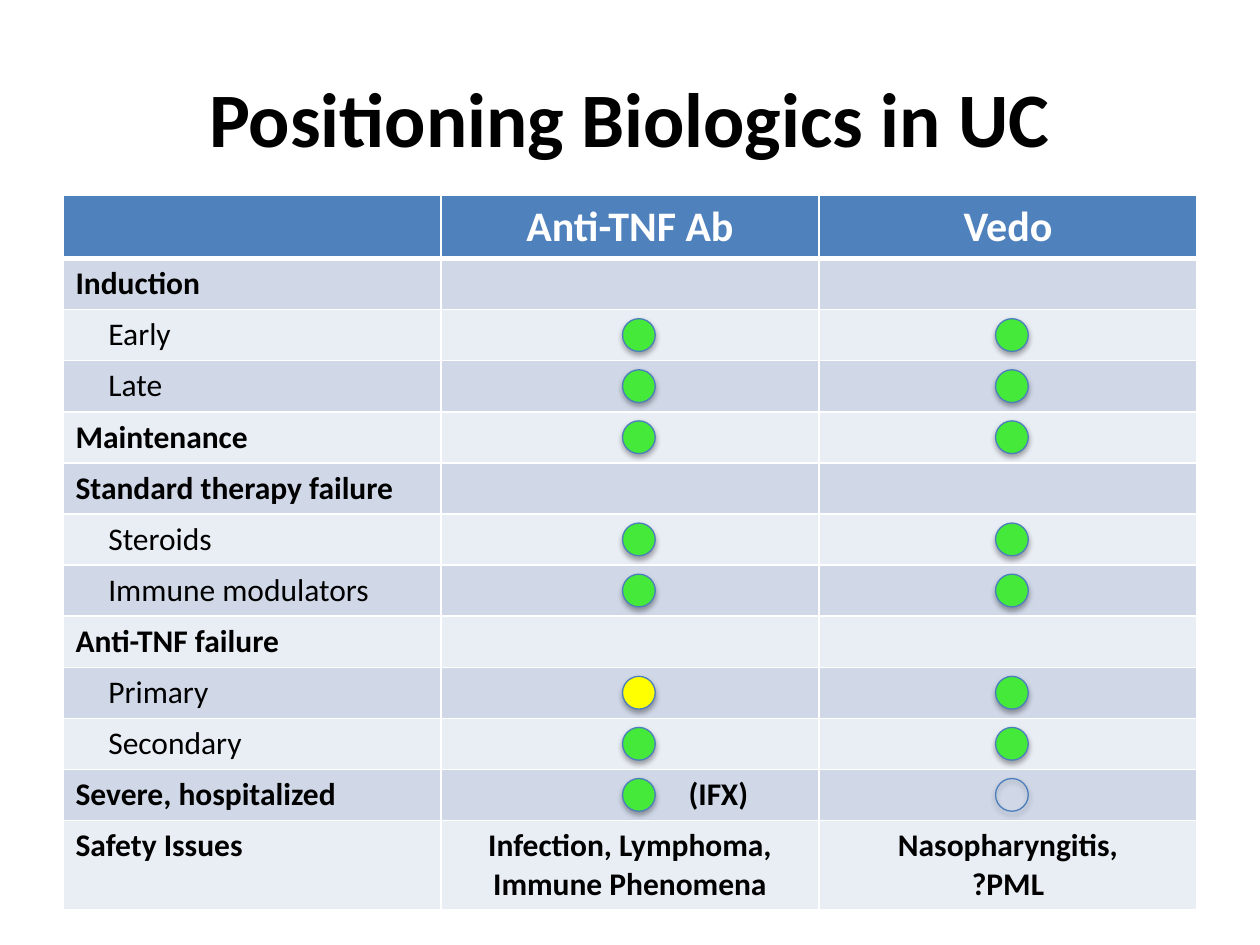
"""Build a slide comparing biologics for UC in a table with rating dots."""
from lxml import etree
from pptx import Presentation
from pptx.dml.color import RGBColor
from pptx.enum import shapes, text
from pptx.oxml import ns
from pptx.util import Cm, Pt

BLACK = RGBColor(0x00, 0x00, 0x00)
WHITE = RGBColor(0xFF, 0xFF, 0xFF)
HEADER_BLUE = RGBColor(0x4F, 0x81, 0xBD)
BAND_DARK = RGBColor(0xD0, 0xD8, 0xE8)
BAND_LIGHT = RGBColor(0xE9, 0xED, 0xF4)
DOT_LINE = RGBColor(0x4B, 0x7E, 0xBC)
GREEN = RGBColor(0x45, 0xE9, 0x3A)
YELLOW = RGBColor(0xFF, 0xFF, 0x00)
FONT = "Calibri"

TITLE = "Positioning Biologics in UC"
HEADERS = ["", "Anti-TNF Ab", "Vedo"]
TOPIC, DETAIL = "topic", "detail"
ROWS = [
    (TOPIC, "Induction", "", ""),
    (DETAIL, "Early", "", ""),
    (DETAIL, "Late", "", ""),
    (TOPIC, "Maintenance", "", ""),
    (TOPIC, "Standard therapy failure", "", ""),
    (DETAIL, "Steroids", "", ""),
    (DETAIL, "Immune modulators", "", ""),
    (TOPIC, "Anti-TNF failure", "", ""),
    (DETAIL, "Primary", "", ""),
    (DETAIL, "Secondary", "", ""),
    (TOPIC, "Severe, hospitalized", "(IFX)", ""),
    (TOPIC, "Safety Issues", "Infection, Lymphoma, Immune Phenomena",
     "Nasopharyngitis,\n?PML"),
]
RATINGS = {
    "Early": (GREEN, GREEN),
    "Late": (GREEN, GREEN),
    "Maintenance": (GREEN, GREEN),
    "Steroids": (GREEN, GREEN),
    "Immune modulators": (GREEN, GREEN),
    "Primary": (YELLOW, GREEN),
    "Secondary": (GREEN, GREEN),
    "Severe, hospitalized": (GREEN, None),
}

LEFT, TOP, COLUMN_WIDTH = Cm(1.27), Cm(3.94), Cm(7.62)
ROW_HEIGHTS = [Cm(1.27)] + [Cm(1.03)] * (len(ROWS) - 1) + [Cm(1.79)]
DOT_SIZE = Cm(0.66)
DOT_CENTERS = (Cm(12.88), Cm(20.4))
DETAIL_INDENT, NOTE_INDENT = Cm(0.66), Cm(4.74)


def write(frame, content, size, color, bold=True, centered=True, indent=0):
    for index, line in enumerate(content.split("\n")):
        paragraph = frame.add_paragraph() if index else frame.paragraphs[0]
        paragraph.alignment = text.PP_ALIGN.CENTER if centered else text.PP_ALIGN.LEFT
        if indent:
            paragraph._p.get_or_add_pPr().set("indent", str(indent))
        run = paragraph.add_run()
        run.text = line
        run.font.name, run.font.size, run.font.bold = FONT, Pt(size), bold
        run.font.color.rgb = color


def style_cell(cell, color, bottom_width):
    cell.fill.solid()
    cell.fill.fore_color.rgb = color
    properties = cell._tc.get_or_add_tcPr()
    for index, side in enumerate(("lnL", "lnR", "lnT", "lnB")):
        width = Pt(bottom_width if side == "lnB" else 1)
        border = etree.Element(ns.qn(f"a:{side}"), w=str(width))
        fill = etree.SubElement(border, ns.qn("a:solidFill"))
        etree.SubElement(fill, ns.qn("a:srgbClr"), val=str(WHITE))
        properties.insert(index, border)


def add_title(slide):
    box = slide.shapes.add_textbox(LEFT, Cm(0.76), Cm(22.86), Cm(3.18))
    box.text_frame.word_wrap = True
    box.text_frame.vertical_anchor = text.MSO_ANCHOR.MIDDLE
    write(box.text_frame, TITLE, 44, BLACK)


def add_comparison(slide):
    table = slide.shapes.add_table(
        len(ROW_HEIGHTS), len(HEADERS), LEFT, TOP,
        COLUMN_WIDTH * len(HEADERS), sum(ROW_HEIGHTS)).table
    for row, height in zip(table.rows, ROW_HEIGHTS):
        row.height = height
    for column, header in enumerate(HEADERS):
        table.columns[column].width = COLUMN_WIDTH
        cell = table.cell(0, column)
        style_cell(cell, HEADER_BLUE, 3)
        if header:
            write(cell.text_frame, header, 24, WHITE)
    for number, (level, *contents) in enumerate(ROWS, 1):
        for column, content in enumerate(contents):
            cell = table.cell(number, column)
            style_cell(cell, BAND_DARK if number % 2 else BAND_LIGHT, 1)
            if not content:
                continue
            is_note = content == "(IFX)"
            is_detail = level == DETAIL
            indent = NOTE_INDENT if is_note else DETAIL_INDENT if is_detail else 0
            write(cell.text_frame, content, 18, BLACK, bold=not is_detail,
                  centered=column > 0 and not is_note, indent=indent)


def add_dots(slide):
    for number, (_, label, *_) in enumerate(ROWS, 1):
        middle = TOP + sum(ROW_HEIGHTS[:number]) + ROW_HEIGHTS[number] // 2
        for center, color in zip(DOT_CENTERS, RATINGS.get(label, ())):
            dot = slide.shapes.add_shape(
                shapes.MSO_SHAPE.OVAL, center - DOT_SIZE // 2,
                middle - DOT_SIZE // 2, DOT_SIZE, DOT_SIZE)
            dot.line.color.rgb = DOT_LINE
            dot.line.width = Pt(0.75)
            if color is None:
                dot.fill.background()
            else:
                dot.fill.solid()
                dot.fill.fore_color.rgb = color


def main():
    presentation = Presentation()
    presentation.slide_width, presentation.slide_height = Cm(25.4), Cm(19.05)
    slide = presentation.slides.add_slide(presentation.slide_layouts[6])
    add_title(slide)
    add_comparison(slide)
    add_dots(slide)
    presentation.save("out.pptx")


if __name__ == "__main__":
    main()
